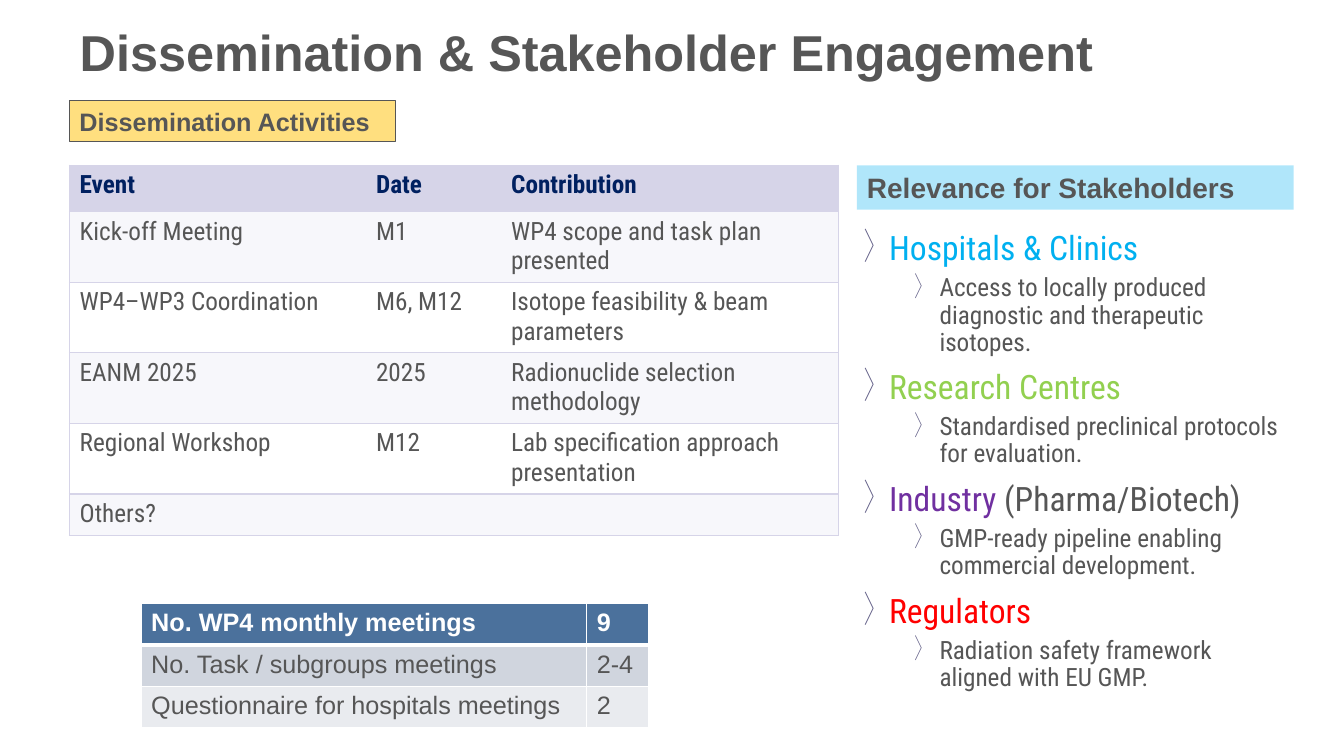
"""Build the dissemination and stakeholder engagement slide."""
from dataclasses import dataclass

from lxml import etree
from pptx import Presentation
from pptx import util as u
from pptx.dml.color import RGBColor
from pptx.enum import shapes, text
from pptx.oxml.ns import qn

HEAD, BODY = "Arial", "Roboto Condensed"
GREY, WHITE, LILAC, NAVY = "565656", "FFFFFF", "D6D4E8", "002060"
SIDES = ("L", "R", "T", "B")


@dataclass
class Label:
    text: str
    box: tuple[float, float, float, float]
    size: int
    fill: str
    alpha: int
    line: str | None = None


@dataclass
class Table:
    left: float
    top: float
    cols: list[float]
    heights: list[float]
    rows: list[tuple[str, ...]]
    font: str
    head_color: str
    fills: tuple[str, str, str]
    border: str
    inner_vertical: bool
    head_rule: int


@dataclass
class Stakeholder:
    name: str
    color: str
    benefit: str
    suffix: str = ""


LABELS = [
    Label("Relevance for Stakeholders", (8.5, 1.64, 4.33, 0.44), 20, "00B0F0", 31),
    Label("Dissemination Activities", (0.69, 1, 3.23, 0.4), 18, "FFC000", 50, GREY),
]

TABLES = [
    Table(0.69, 1.64, [2.94, 1.34, 3.35], [0.46] + [0.7] * 4 + [0.41], [
        ("Event", "Date", "Contribution"),
        ("Kick-off Meeting", "M1", "WP4 scope and task plan presented"),
        ("WP4–WP3 Coordination", "M6, M12", "Isotope feasibility & beam parameters"),
        ("EANM 2025", "2025", "Radionuclide selection methodology"),
        ("Regional Workshop", "M12", "Lab specification approach presentation"),
        ("Others?", "", ""),
    ], BODY, NAVY, (LILAC, "F7F7FB", WHITE), LILAC, False, 1),
    Table(1.4, 5.99, [4.42, 0.61], [0.41] * 3, [
        ("No. WP4 monthly meetings", "9"),
        ("No. Task / subgroups meetings", "2-4"),
        ("Questionnaire for hospitals meetings", "2"),
    ], HEAD, WHITE, ("4B719C", "D0D5DE", "E9EBEF"), WHITE, True, 3),
]

STAKEHOLDERS = [
    Stakeholder("Hospitals & Clinics", "00B0F0",
                "Access to locally produced diagnostic and therapeutic isotopes."),
    Stakeholder("Research Centres", "92D050",
                "Standardised preclinical protocols for evaluation."),
    Stakeholder("Industry", "7030A0",
                "GMP-ready pipeline enabling commercial development.", " (Pharma/Biotech)"),
    Stakeholder("Regulators", "FF0000",
                "Radiation safety framework aligned with EU GMP."),
]


def rgb(value: str) -> RGBColor:
    return RGBColor.from_string(value)


def style(r, font: str, size: int, color: str, bold: bool = False) -> None:
    r.font.name, r.font.size, r.font.bold = font, u.Pt(size), bold
    r.font.color.rgb = rgb(color)


def add_title(s, title: str) -> None:
    sp = s.shapes.title
    sp.left, sp.top, sp.width, sp.height = map(u.Inches, (0.69, 0.13, 11.95, 0.83))
    tf = sp.text_frame
    tf.text = title
    tf.vertical_anchor = text.MSO_ANCHOR.MIDDLE
    p = tf.paragraphs[0]
    p.alignment, p.line_spacing = text.PP_ALIGN.LEFT, 0.9
    style(p.runs[0], HEAD, 36, GREY, True)


def add_label(s, label: Label) -> None:
    sp = s.shapes.add_shape(shapes.MSO_SHAPE.RECTANGLE, *map(u.Inches, label.box))
    sp.shadow.inherit = False
    sp.fill.solid()
    sp.fill.fore_color.rgb = rgb(label.fill)
    color = sp.fill._xPr.find(qn("a:solidFill"))[0]
    etree.SubElement(color, qn("a:alpha"), val=str(label.alpha * 1000))
    if label.line:
        sp.line.color.rgb = rgb(label.line)
        sp.line.width = u.Pt(0.75)
    else:
        sp.line.fill.background()
    sp.text_frame.text = label.text
    p = sp.text_frame.paragraphs[0]
    p.alignment = text.PP_ALIGN.LEFT
    style(p.runs[0], HEAD, label.size, GREY, True)


def set_border(cell, side: str, color: str | None, width: int) -> None:
    ln = etree.SubElement(cell._tc.get_or_add_tcPr(), qn(f"a:ln{side}"), w=str(u.Pt(width)))
    if color:
        fill = etree.SubElement(ln, qn("a:solidFill"))
        etree.SubElement(fill, qn("a:srgbClr"), val=color)
    else:
        etree.SubElement(ln, qn("a:noFill"))


def add_table(s, t: Table) -> None:
    box = (t.left, t.top, sum(t.cols), sum(t.heights))
    table = s.shapes.add_table(len(t.rows), len(t.cols), *map(u.Inches, box)).table
    table.horz_banding = False
    for column, width in zip(table.columns, t.cols):
        column.width = u.Inches(width)
    for i, values in enumerate(t.rows):
        table.rows[i].height = u.Inches(t.heights[i])
        for j, value in enumerate(values):
            cell = table.cell(i, j)
            outer = {"L": j == 0, "R": j == len(t.cols) - 1}
            for side in SIDES:
                shown = t.inner_vertical or outer.get(side, True)
                under_head = (i, side) in ((0, "B"), (1, "T"))
                set_border(cell, side, t.border if shown else None,
                           t.head_rule if under_head else 1)
            cell.fill.solid()
            cell.fill.fore_color.rgb = rgb(t.fills[0 if i == 0 else 2 - i % 2])
            if value:
                cell.text = value
                style(cell.text_frame.paragraphs[0].runs[0], t.font, 18,
                      GREY if i else t.head_color, i == 0)


def format_bullet(p, level: int) -> None:
    p.level = level
    pPr = p._p.get_or_add_pPr()
    pPr.set("marL", str(u.Inches(0.25 + 0.5 * level)))
    pPr.set("indent", str(u.Inches(-0.25)))
    color = etree.SubElement(pPr, qn("a:buClr"))
    etree.SubElement(color, qn("a:srgbClr"), val="5F5C85")
    etree.SubElement(pPr, qn("a:buChar"), char="⟩")
    p.line_spacing = 0.9


def add_stakeholders(s, items: list[Stakeholder]) -> None:
    tf = s.shapes.add_textbox(*map(u.Inches, (8.47, 2.25, 4.33, 4.92))).text_frame
    tf.word_wrap = True
    for i, item in enumerate(items):
        p = tf.add_paragraph() if i else tf.paragraphs[0]
        format_bullet(p, 0)
        if i:
            p.space_before = u.Pt(10)
        p.text = item.name
        style(p.runs[0], BODY, 24, item.color)
        if item.suffix:
            r = p.add_run()
            r.text = item.suffix
            style(r, BODY, 24, GREY)
        p = tf.add_paragraph()
        format_bullet(p, 1)
        p.space_before = u.Pt(5)
        p.text = item.benefit
        style(p.runs[0], BODY, 18, GREY)


def main() -> None:
    prs = Presentation()
    prs.slide_width, prs.slide_height = u.Inches(13.33), u.Inches(7.5)
    s = prs.slides.add_slide(prs.slide_layouts[5])
    add_title(s, "Dissemination & Stakeholder Engagement")
    add_stakeholders(s, STAKEHOLDERS)
    for label in LABELS:
        add_label(s, label)
    for t in TABLES:
        add_table(s, t)
    prs.save("out.pptx")


if __name__ == "__main__":
    main()
